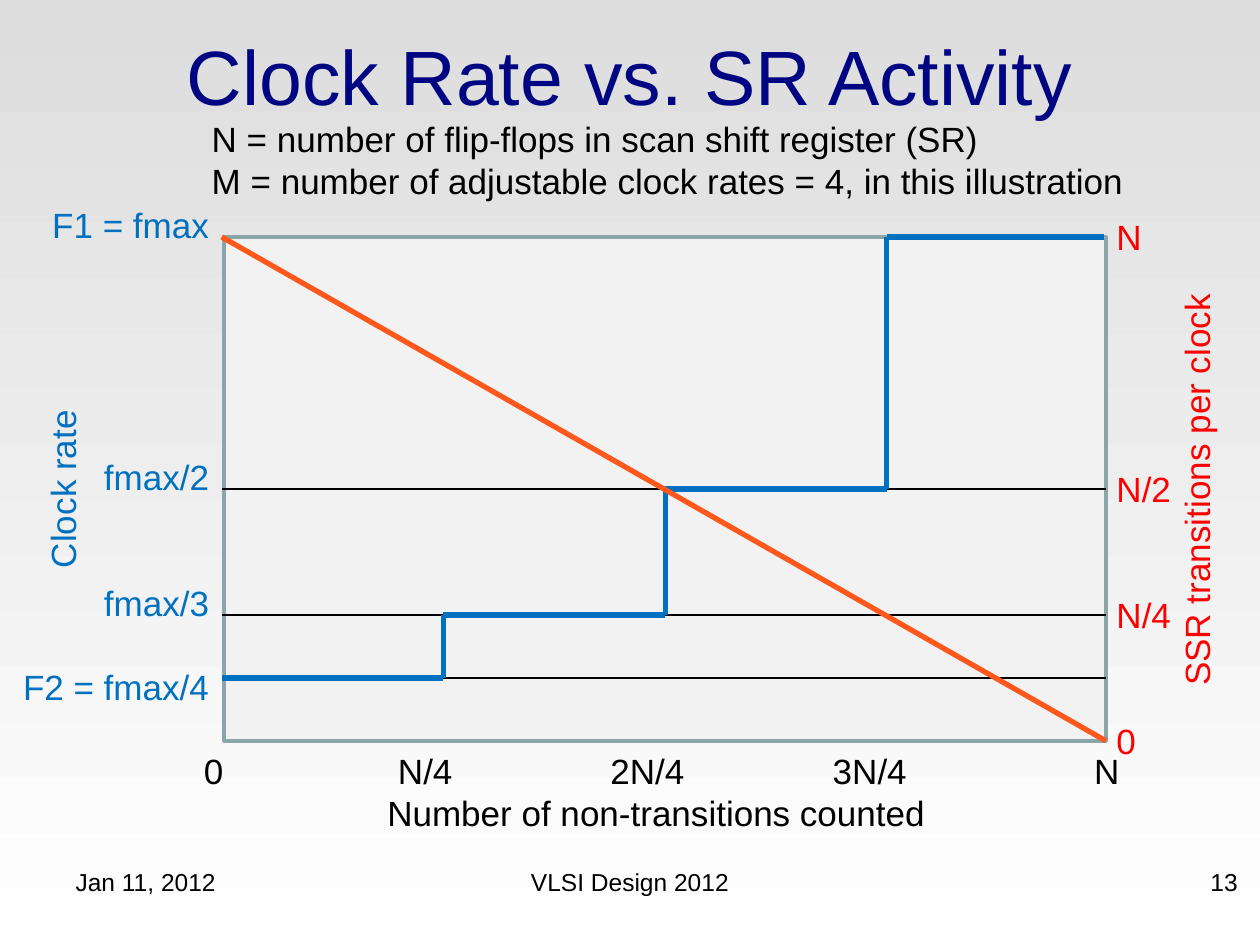
from pptx import Presentation
from pptx.util import Pt
from pptx.dml.color import RGBColor
from pptx.enum.shapes import MSO_CONNECTOR, MSO_SHAPE
from pptx.enum.text import MSO_ANCHOR, PP_ALIGN
from pptx.oxml.ns import qn
from lxml.etree import SubElement

COLORS = {"title": "000681", "text": "000000", "clock": "0070C0",
          "activity": "FF0000", "falling": "FF581D", "plot": "F2F2F2",
          "frame": "8AA6A8", "bg_top": "DDDDDD", "bg_bottom": "FFFFFF"}
LEFT, CENTER, RIGHT = PP_ALIGN.LEFT, PP_ALIGN.CENTER, PP_ALIGN.RIGHT

# Content: labels with the centre of each, in points
TITLE = "Clock Rate vs. SR Activity"
DEFINITIONS = ["N = number of flip-flops in scan shift register (SR)",
               "M = number of adjustable clock rates = 4, in this illustration"]
CLOCK_LABELS = [("F1 = fmax", 128), ("fmax/2", 272), ("fmax/3", 344), ("F2 = fmax/4", 392)]
ACTIVITY_LABELS = [("N", 1), ("N/2", 0.5), ("N/4", 0.25), ("0", 0)]
COUNT_LABELS = [("0", 122), ("N/4", 243), ("2N/4", 370), ("3N/4", 497), ("N", 632.5)]
AXIS_TITLES = [("Clock rate", 35.5, 279.5, 105, "clock", 270),
               ("SSR transitions per clock", 683.5, 280, 240, "activity", 270),
               ("Number of non-transitions counted", 375, 464, 400, "text", 0)]
FOOTERS = [("Jan 11, 2012", 43.2, 153, LEFT), ("VLSI Design 2012", 253.5, 213, CENTER),
           ("13", 553.7, 153.6, RIGHT)]

# Plot geometry
PLOT_X, PLOT_Y, PLOT_W, PLOT_H = 128, 135.4, 504, 288
STEP_X, STEP_W = 126.7, 126.7
LEVELS = [PLOT_Y + PLOT_H * (1 - f) for f in (1 / 8, 1 / 4, 1 / 2, 1)]

prs = Presentation()
prs.slide_width, prs.slide_height = Pt(720), Pt(540)
s = prs.slides.add_slide(prs.slide_layouts[6])


def rgb(name):
    return RGBColor.from_string(COLORS[name])


def add_text(lines, x, y, w, h, color="text", align=LEFT, size=20,
             anchor=MSO_ANCHOR.MIDDLE, rotation=0):
    sp = s.shapes.add_textbox(Pt(x), Pt(y), Pt(w), Pt(h))
    sp.rotation = rotation
    tf = sp.text_frame
    tf.word_wrap = True
    tf.vertical_anchor = anchor
    tf.margin_left = tf.margin_right = tf.margin_top = tf.margin_bottom = 0
    for i, line in enumerate(lines):
        p = tf.paragraphs[0] if i == 0 else tf.add_paragraph()
        p.alignment = align
        r = p.add_run()
        r.text = line
        r.font.name, r.font.size = "Arial", Pt(size)
        r.font.color.rgb = rgb(color)


def add_line(x1, y1, x2, y2, color, width):
    c = s.shapes.add_connector(MSO_CONNECTOR.STRAIGHT, Pt(x1), Pt(y1), Pt(x2), Pt(y2))
    c.line.color.rgb = rgb(color)
    c.line.width = Pt(width)
    SubElement(c._element.spPr, qn("a:effectLst"))


# Background
fill = s.background.fill
fill.gradient()
fill.gradient_angle = 270
for stop, name in zip(fill.gradient_stops, ("bg_top", "bg_bottom")):
    stop.color.rgb = rgb(name)

# Title, definitions and footer
add_text([TITLE], 36, 21.6, 648, 41.8, "title", CENTER, 44)
add_text(DEFINITIONS, 121, 67, 560, 48)
for text, x, w, align in FOOTERS:
    add_text([text], x, 495.6, w, 24, align=align, size=14, anchor=MSO_ANCHOR.TOP)

# Plot area and grid
sp = s.shapes.add_shape(MSO_SHAPE.RECTANGLE, Pt(PLOT_X), Pt(PLOT_Y), Pt(PLOT_W), Pt(PLOT_H))
sp.shadow.inherit = False
sp.fill.solid()
sp.fill.fore_color.rgb = rgb("plot")
sp.line.color.rgb = rgb("frame")
sp.line.width = Pt(2)
for y in LEVELS[:-1]:
    add_line(STEP_X, y, PLOT_X + PLOT_W, y, "text", 0.75)

# Clock rate staircase
for i, y in enumerate(LEVELS):
    x = STEP_X + i * STEP_W
    add_line(x, y, min(x + STEP_W, 630.7), y, "clock", 3)
    if i:
        add_line(x, LEVELS[i - 1], x, y, "clock", 3)

# Falling activity line
add_line(STEP_X, PLOT_Y, PLOT_X + PLOT_W, PLOT_Y + PLOT_H, "falling", 3)

# Axis labels
for text, y in CLOCK_LABELS:
    add_text([text], 0, y - 12, 119.5, 24, "clock", RIGHT)
for text, share in ACTIVITY_LABELS:
    add_text([text], 638, PLOT_Y + PLOT_H * (1 - share) - 12, 40, 24, "activity")
for text, x in COUNT_LABELS:
    add_text([text], x - 30, 428, 60, 24, align=CENTER)
for text, x, y, w, color, rotation in AXIS_TITLES:
    add_text([text], x - w / 2, y - 12, w, 24, color, CENTER, rotation=rotation)

prs.save("out.pptx")
